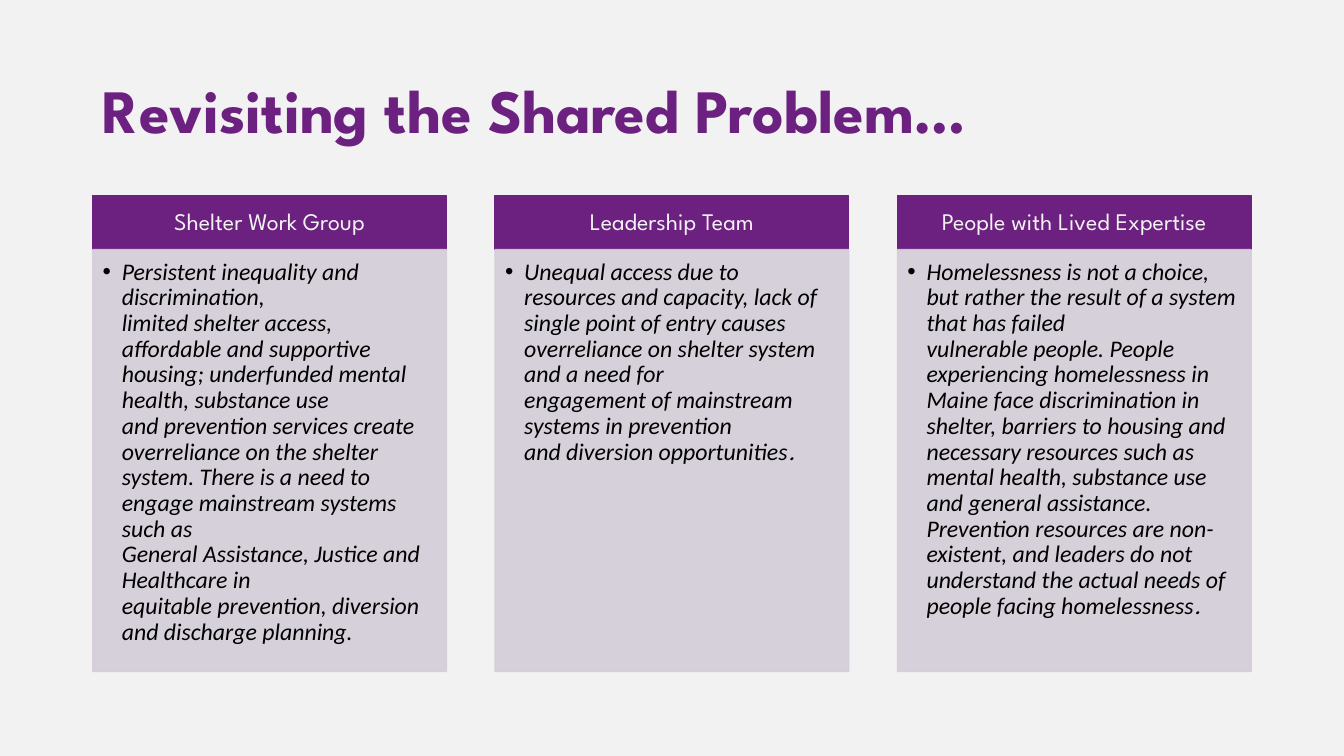
from dataclasses import dataclass

from lxml import etree
from pptx import Presentation
from pptx import util as u
from pptx.dml.color import RGBColor
from pptx.enum import shapes, text
from pptx.oxml import ns

PURPLE, LILAC, PALE, BLACK = "6C2080", "D4CDD8", "F2F2F2", "000000"
HEADING_FONT, BODY_FONT = "League Spartan", "Calibri"
LEFT, COLUMN_PITCH, COLUMN_WIDTH = 2.34, 10.14, 8.91
HEADER_TOP, HEADER_HEIGHT, BODY_HEIGHT = 4.93, 1.36, 10.63
BULLET_INDENT = 0.48
NO_BREAK_SPACE = chr(160)


@dataclass
class Column:
    heading: str
    body: str  # a tilde joins words that stay on one line
    full_stop: str = ""  # set in the heading font


COLUMNS = [
    Column(
        "Shelter Work Group",
        "Persistent inequality and discrimination, limited~shelter~access, "
        "affordable and supportive housing;~underfunded~mental health, "
        "substance use and~prevention services~create overreliance on "
        "the~shelter system. There is a need~to engage~mainstream systems "
        "such as General~Assistance,~Justice and Healthcare in "
        "equitable~prevention,~diversion and discharge planning.",
    ),
    Column(
        "Leadership Team",
        "Unequal access due to resources and capacity,~lack of single point "
        "of~entry causes overreliance~on shelter system and a need for "
        "engagement~of~mainstream systems in prevention "
        "and~diversion opportunities",
        ".",
    ),
    Column(
        "People with Lived Expertise",
        "Homelessness is not a choice, but rather the result of a system that "
        "has~failed vulnerable~people. People experiencing homelessness in "
        "Maine face~discrimination in shelter, barriers to~housing and "
        "necessary resources~such as mental health, substance use and "
        "general~assistance. Prevention~resources are non-existent, and "
        "leaders do not understand the~actual~needs of people facing "
        "homelessness",
        ".",
    ),
]


def color(value: str) -> RGBColor:
    return RGBColor.from_string(value)


def format_run(run, font: str, size: float, value: str,
               bold: bool = False, italic: bool = False) -> None:
    run.font.name = font
    run.font.size = u.Pt(size)
    run.font.bold = bold
    run.font.italic = italic
    run.font.color.rgb = color(value)


def set_margins(frame, left: float, top: float, right: float, bottom: float) -> None:
    frame.word_wrap = True
    frame.margin_left, frame.margin_top = u.Cm(left), u.Cm(top)
    frame.margin_right, frame.margin_bottom = u.Cm(right), u.Cm(bottom)


def add_panel(slide, left: float, top: float, height: float, fill: str):
    shape = slide.shapes.add_shape(
        shapes.MSO_SHAPE.RECTANGLE,
        u.Cm(left), u.Cm(top), u.Cm(COLUMN_WIDTH), u.Cm(height))
    shape.shadow.inherit = False
    shape.fill.solid()
    shape.fill.fore_color.rgb = color(fill)
    shape.line.color.rgb = color(fill)
    shape.line.width = u.Pt(1)
    return shape


def set_opacity(shape, percent: int) -> None:
    """Apply the opacity to both the fill and the outline."""
    for element in shape._element.spPr.iter(ns.qn("a:srgbClr")):
        etree.SubElement(element, ns.qn("a:alpha"), val=str(percent * 1000))


def add_bullet(paragraph) -> None:
    properties = paragraph._p.get_or_add_pPr()
    properties.set("marL", str(u.Cm(BULLET_INDENT)))
    properties.set("indent", str(-u.Cm(BULLET_INDENT)))
    etree.SubElement(properties, ns.qn("a:buFont"), typeface="Arial")
    etree.SubElement(properties, ns.qn("a:buChar"), char="•")


def add_title(slide, title: str) -> None:
    box = slide.shapes.add_textbox(u.Cm(LEFT), u.Cm(1.01), u.Cm(29.21), u.Cm(3.68))
    frame = box.text_frame
    frame.word_wrap = True
    frame.vertical_anchor = text.MSO_ANCHOR.MIDDLE
    frame.text = title
    paragraph = frame.paragraphs[0]
    paragraph.line_spacing = 0.9
    format_run(paragraph.runs[0], HEADING_FONT, 44, PURPLE, bold=True)


def add_header(slide, left: float, heading: str) -> None:
    frame = add_panel(slide, left, HEADER_TOP, HEADER_HEIGHT, PURPLE).text_frame
    set_margins(frame, 0.33, 0.2, 0.33, 0.2)
    frame.vertical_anchor = text.MSO_ANCHOR.MIDDLE
    frame.text = heading
    paragraph = frame.paragraphs[0]
    paragraph.alignment = text.PP_ALIGN.CENTER
    paragraph.line_spacing = 0.9
    format_run(paragraph.runs[0], HEADING_FONT, 17, PALE)


def add_body(slide, left: float, column: Column) -> None:
    panel = add_panel(slide, left, HEADER_TOP + HEADER_HEIGHT, BODY_HEIGHT, LILAC)
    set_opacity(panel, 90)
    frame = panel.text_frame
    set_margins(frame, 0.25, 0.25, 0.33, 0.38)
    frame.vertical_anchor = text.MSO_ANCHOR.TOP
    frame.text = column.body.replace("~", NO_BREAK_SPACE)
    paragraph = frame.paragraphs[0]
    add_bullet(paragraph)
    paragraph.alignment = text.PP_ALIGN.LEFT
    paragraph.line_spacing = 0.9
    format_run(paragraph.runs[0], BODY_FONT, 17, BLACK, italic=True)
    if column.full_stop:
        run = paragraph.add_run()
        run.text = column.full_stop
        format_run(run, HEADING_FONT, 17, BLACK, italic=True)


def main() -> None:
    presentation = Presentation()
    presentation.slide_width, presentation.slide_height = u.Cm(33.87), u.Cm(19.05)
    slide = presentation.slides.add_slide(presentation.slide_layouts[6])
    slide.background.fill.solid()
    slide.background.fill.fore_color.rgb = color(PALE)

    add_title(slide, "Revisiting the Shared Problem…")
    for index, column in enumerate(COLUMNS):
        left = LEFT + index * COLUMN_PITCH
        add_header(slide, left, column.heading)
        add_body(slide, left, column)
    presentation.save("out.pptx")


if __name__ == "__main__":
    main()
